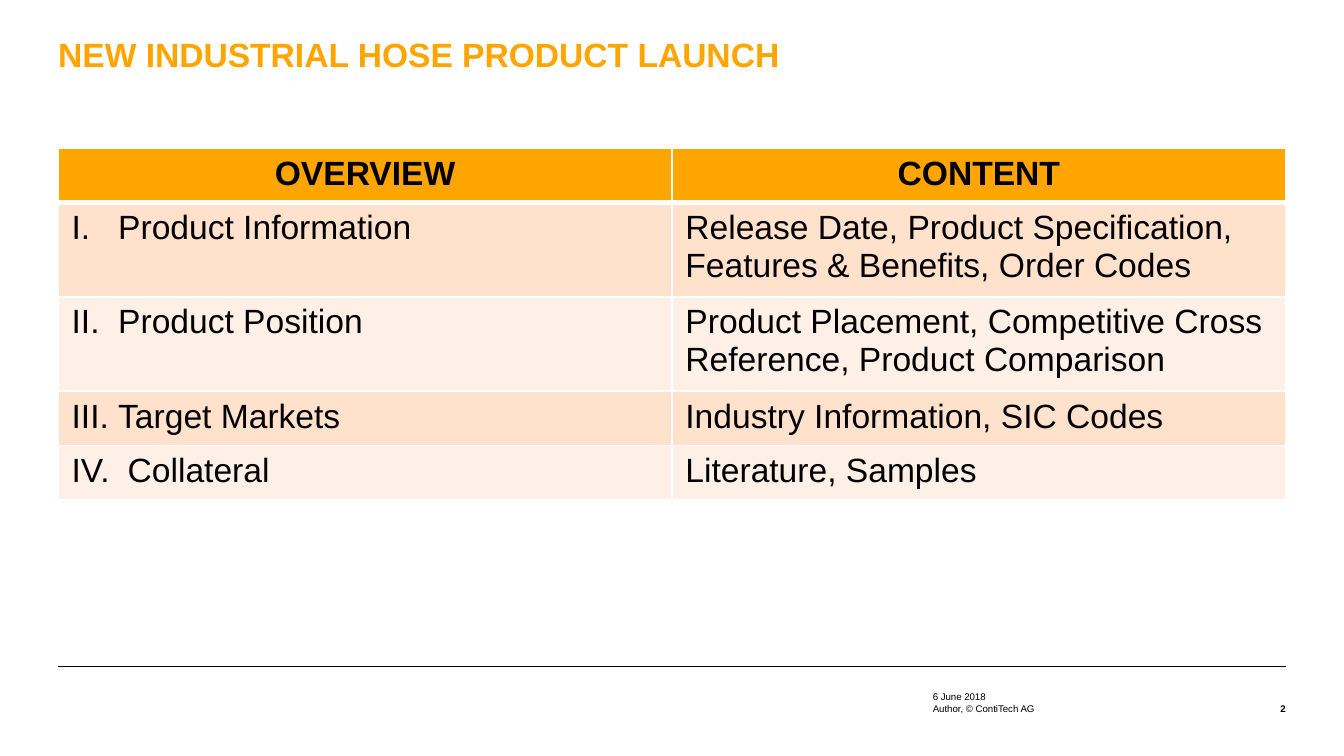
import pptx
import pptx.util
import pptx.dml.color
import pptx.enum.shapes
import pptx.enum.text
import pptx.oxml.ns
from lxml import etree

Cm, Pt = pptx.util.Cm, pptx.util.Pt
RGBColor = pptx.dml.color.RGBColor
PP_ALIGN = pptx.enum.text.PP_ALIGN
ANCHOR = pptx.enum.text.MSO_ANCHOR
qn = pptx.oxml.ns.qn

ORANGE = RGBColor(0xFF, 0xA5, 0x00)
PEACH = RGBColor(0xFF, 0xE1, 0xCC)
PALE_PEACH = RGBColor(0xFF, 0xF0, 0xE7)
BLACK = RGBColor(0, 0, 0)
WHITE = RGBColor(0xFF, 0xFF, 0xFF)
FONT = "Arial"

# Content
TITLE = "NEW INDUSTRIAL HOSE PRODUCT LAUNCH"
HEADINGS = ["OVERVIEW", "CONTENT"]
# numeral, topic, distance from numeral to topic in cm, details
TOPICS = [
    ("I.", "Product Information", 0.88,
     "Release Date, Product Specification, Features & Benefits, Order Codes"),
    ("II.", "Product Position", 0.88,
     "Product Placement, Competitive Cross Reference, Product Comparison"),
    ("III.", "Target Markets", 0.88, "Industry Information, SIC Codes"),
    ("IV.", "Collateral", 1.06, "Literature, Samples"),
]
DATE = "6 June 2018"
AUTHOR = "Author, © ContiTech AG"
PAGE_NUMBER = "2"

# Layout in cm
MARGIN, CONTENT_WIDTH = 1.1, 23.2
TABLE_TOP, ROW_HEIGHT = 2.8, 1.03
FOOTER_LEFT, FOOTER_TOP, FOOTER_LINE = 17.63, 12.98, 0.3


def add_run(paragraph, text, size, color=BLACK, bold=False):
    run = paragraph.add_run()
    run.text = text
    run.font.name, run.font.size, run.font.bold = FONT, Pt(size), bold
    run.font.color.rgb = color


def add_text(slide, text, box, size, color=BLACK, bold=False, wrap=False,
             align=PP_ALIGN.LEFT, anchor=ANCHOR.TOP, insets=(0, 0, 0, 0)):
    frame = slide.shapes.add_textbox(*map(Cm, box)).text_frame
    frame.word_wrap, frame.vertical_anchor = wrap, anchor
    (frame.margin_left, frame.margin_top,
     frame.margin_right, frame.margin_bottom) = map(Cm, insets)
    paragraph = frame.paragraphs[0]
    paragraph.alignment = align
    add_run(paragraph, text, size, color, bold)
    return paragraph


def style_cell(cell, fill, bottom_width):
    """White borders come before the fill in the cell properties."""
    properties = cell._tc.get_or_add_tcPr()
    for side, width in (("L", 1), ("R", 1), ("T", 1), ("B", bottom_width)):
        border = etree.SubElement(properties, qn(f"a:ln{side}"), w=str(Pt(width)))
        solid = etree.SubElement(border, qn("a:solidFill"))
        etree.SubElement(solid, qn("a:srgbClr"), val=str(WHITE))
    cell.fill.solid()
    cell.fill.fore_color.rgb = fill


def add_tab_stop(paragraph, position):
    tabs = etree.SubElement(paragraph._p.get_or_add_pPr(), qn("a:tabLst"))
    etree.SubElement(tabs, qn("a:tab"), pos=str(Cm(position)), algn="l")


def add_topics_table(slide):
    row_count = len(TOPICS) + 1
    table = slide.shapes.add_table(
        row_count, len(HEADINGS), Cm(MARGIN), Cm(TABLE_TOP),
        Cm(CONTENT_WIDTH), Cm(ROW_HEIGHT * row_count)).table

    for column, heading in enumerate(HEADINGS):
        cell = table.cell(0, column)
        style_cell(cell, ORANGE, 3)
        paragraph = cell.text_frame.paragraphs[0]
        paragraph.alignment = PP_ALIGN.CENTER
        add_run(paragraph, heading, 18, bold=True)

    for row, (numeral, topic, tab, details) in enumerate(TOPICS, 1):
        fill = PEACH if row % 2 else PALE_PEACH
        for column, text in enumerate((f"{numeral}\t{topic}", details)):
            cell = table.cell(row, column)
            style_cell(cell, fill, 1)
            paragraph = cell.text_frame.paragraphs[0]
            if column == 0:
                add_tab_stop(paragraph, tab)
            add_run(paragraph, text, 18)


def main():
    presentation = pptx.Presentation()
    presentation.slide_width, presentation.slide_height = Cm(25.4), Cm(14.29)
    slide = presentation.slides.add_slide(presentation.slide_layouts[6])

    # Footer rule
    rule = slide.shapes.add_connector(
        pptx.enum.shapes.MSO_CONNECTOR.STRAIGHT,
        Cm(MARGIN), Cm(12.6), Cm(MARGIN + CONTENT_WIDTH), Cm(12.6))
    rule.line.color.rgb, rule.line.width = BLACK, Pt(0.35)
    etree.SubElement(rule._element.spPr, qn("a:effectLst"))

    # Title and table
    title = add_text(slide, TITLE, (MARGIN, 0.61, CONTENT_WIDTH, 1.5), 18, ORANGE,
                     bold=True, wrap=True, insets=(0, 0.08, 0.25, 0))
    title.line_spacing = 0.95
    add_topics_table(slide)

    # Footer
    author_top = FOOTER_TOP + FOOTER_LINE
    add_text(slide, DATE, (FOOTER_LEFT, FOOTER_TOP, 5.56, FOOTER_LINE), 5.2,
             anchor=ANCHOR.BOTTOM)
    add_text(slide, AUTHOR, (FOOTER_LEFT, author_top, 5.56, FOOTER_LINE), 5.2)
    add_text(slide, PAGE_NUMBER, (23.3, author_top, 1, FOOTER_LINE), 5.2,
             bold=True, align=PP_ALIGN.RIGHT)

    presentation.save("out.pptx")


if __name__ == "__main__":
    main()
